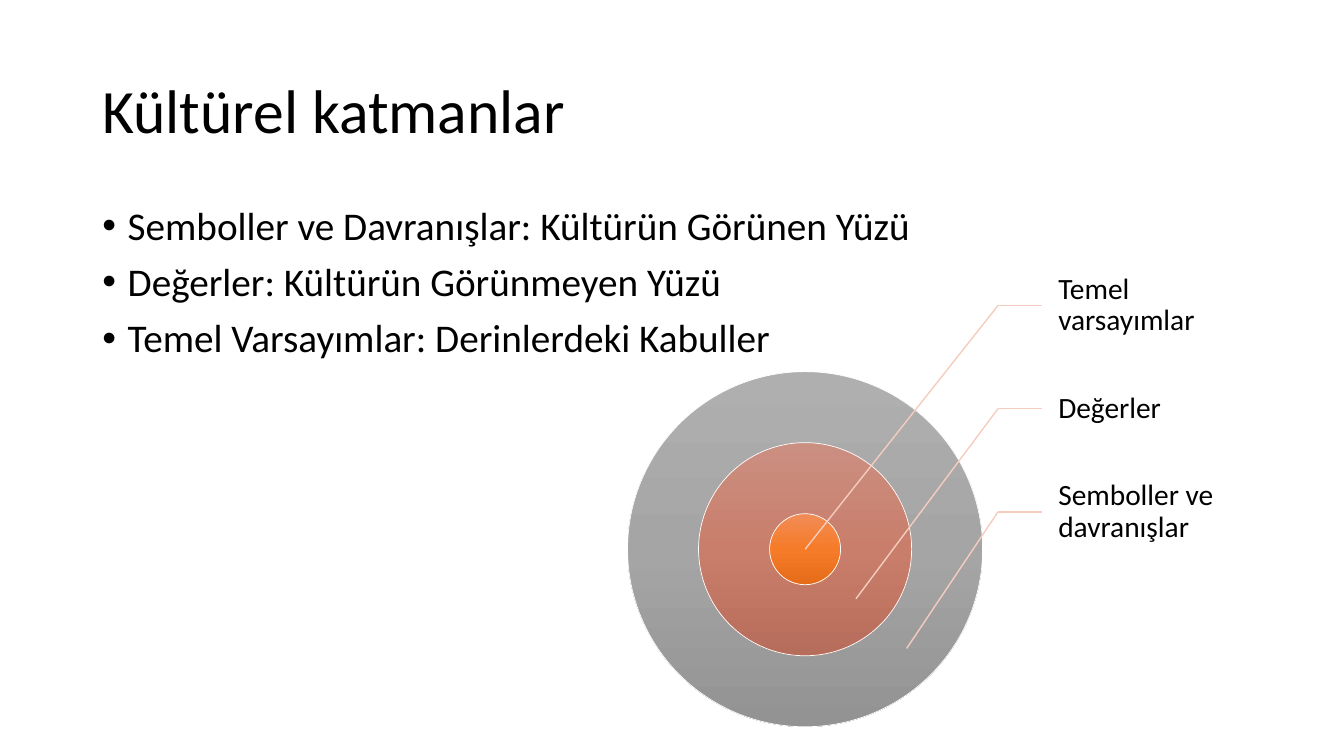
from copy import deepcopy

from lxml import etree
from pptx import Presentation
from pptx.dml.color import RGBColor
from pptx.enum.shapes import MSO_CONNECTOR, MSO_SHAPE
from pptx.enum.text import MSO_ANCHOR
from pptx.oxml.ns import qn
from pptx.util import Cm, Pt

COLORS = {
    "text": "000000",
    "outline": "FFFFFF",
    "leader": "F6CCBE",
    "outer": ("AFAFAF", "A5A5A5", "939393"),
    "middle": ("CB8F81", "C97E6B", "B76D5B"),
    "core": ("F18C57", "F67B28", "E56C19"),
}

deck = Presentation()
deck.slide_width, deck.slide_height = Cm(33.87), Cm(19.05)
page = deck.slides.add_slide(deck.slide_layouts[6])


def add_text(left, top, width, height, lines, size, anchor):
    box = page.shapes.add_textbox(Cm(left), Cm(top), Cm(width), Cm(height))
    frame = box.text_frame
    frame.word_wrap = True
    frame.vertical_anchor = anchor
    frame.text = "\n".join(lines)
    for para in frame.paragraphs:
        para.line_spacing = 0.9
        for span in para.runs:
            span.font.name = "Calibri"
            span.font.size = Pt(size)
            span.font.color.rgb = RGBColor.from_string(COLORS["text"])
    return frame


def add_leader(start_x, start_y, end_x, end_y):
    line = page.shapes.add_connector(
        MSO_CONNECTOR.STRAIGHT, Cm(start_x), Cm(start_y), Cm(end_x), Cm(end_y))
    line.line.color.rgb = RGBColor.from_string(COLORS["leader"])
    line.line.width = Pt(1)
    etree.SubElement(line._element.spPr, qn("a:effectLst"))


# Title
add_text(2.33, 1.01, 29.21, 3.68, ["Kültürel katmanlar"], 44, MSO_ANCHOR.MIDDLE)

# Bullet list
bullets = add_text(2.33, 5.07, 29.21, 12.09, [
    "Semboller ve Davranışlar: Kültürün Görünen Yüzü",
    "Değerler: Kültürün Görünmeyen Yüzü",
    "Temel Varsayımlar: Derinlerdeki Kabuller",
], 28, MSO_ANCHOR.TOP)
for index, para in enumerate(bullets.paragraphs):
    para.space_before = Pt(10 if index else 0)
    properties = para._p.get_or_add_pPr()
    properties.set("marL", str(Cm(0.64)))
    properties.set("indent", str(-Cm(0.64)))
    etree.SubElement(properties, qn("a:buFont")).set("typeface", "Arial")
    etree.SubElement(properties, qn("a:buChar")).set("char", "•")

# Concentric circles, from the outside in
CENTER_X, CENTER_Y = 20.29, 13.84
CORE_DIAMETER = 1.79
for layer, multiple in (("outer", 5), ("middle", 3), ("core", 1)):
    diameter = CORE_DIAMETER * multiple
    circle = page.shapes.add_shape(
        MSO_SHAPE.OVAL, Cm(CENTER_X - diameter / 2), Cm(CENTER_Y - diameter / 2),
        Cm(diameter), Cm(diameter))
    circle.shadow.inherit = False
    circle.line.color.rgb = RGBColor.from_string(COLORS["outline"])
    circle.line.width = Pt(0.5)
    circle.fill.gradient()
    circle.fill.gradient_angle = 270
    stop_list = circle._element.spPr.find(qn("a:gradFill")).find(qn("a:gsLst"))
    stop_list.insert(1, deepcopy(stop_list[0]))
    for stop, position, color in zip(
            circle.fill.gradient_stops, (0, 0.5, 1), COLORS[layer]):
        stop.position = position
        stop.color.rgb = RGBColor.from_string(color)

# Labels with bent leader lines
LABEL_LEFT, LABEL_TOP, LABEL_HEIGHT = 26.26, 6.4, 2.6
BEND_X = 25.15
for index, label in enumerate(
        ["Temel varsayımlar", "Değerler", "Semboller ve davranışlar"]):
    top = LABEL_TOP + index * LABEL_HEIGHT
    middle = top + LABEL_HEIGHT / 2
    frame = add_text(LABEL_LEFT, top, 4.5, LABEL_HEIGHT, [label], 21, MSO_ANCHOR.MIDDLE)
    frame.margin_left = Cm(0.41)
    frame.margin_top = frame.margin_right = frame.margin_bottom = Cm(0.08)
    add_leader(BEND_X, middle, LABEL_LEFT, middle)
    add_leader(BEND_X, middle, CENTER_X + index * 1.28, CENTER_Y + index * 1.25)

deck.save("out.pptx")
